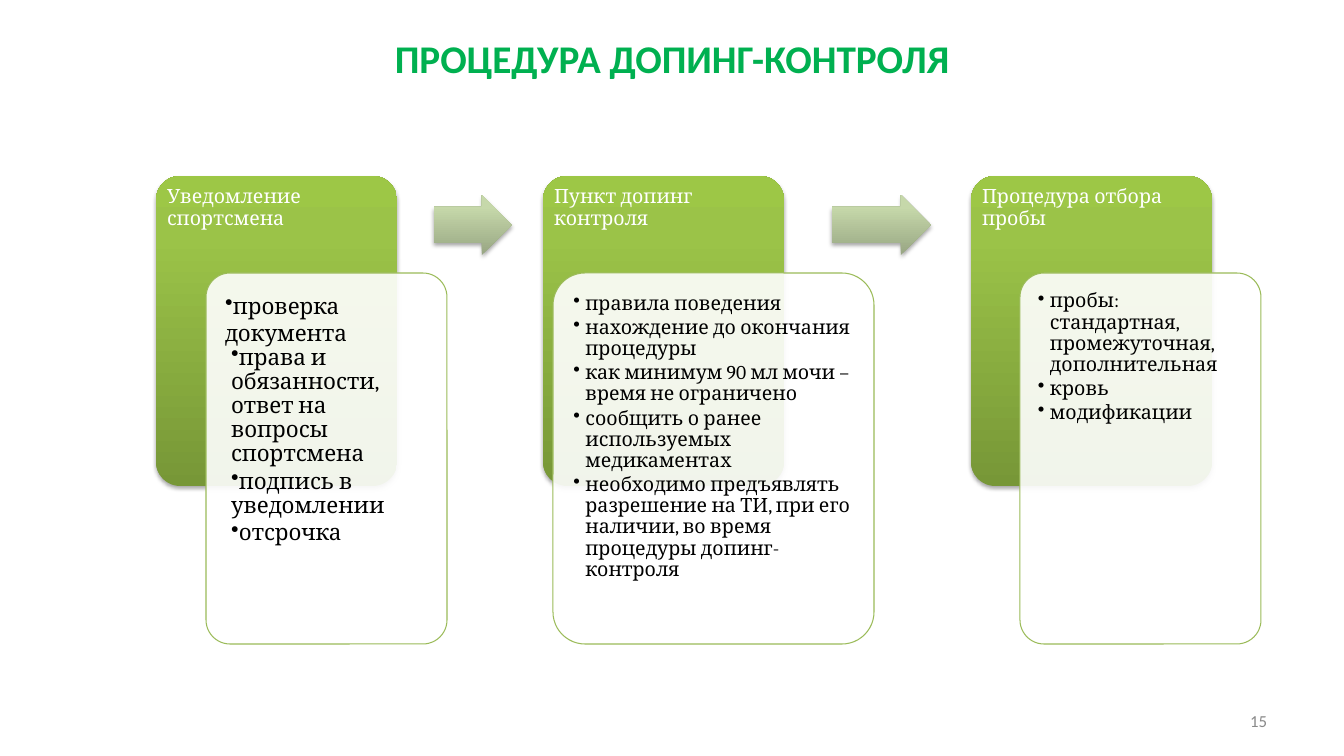
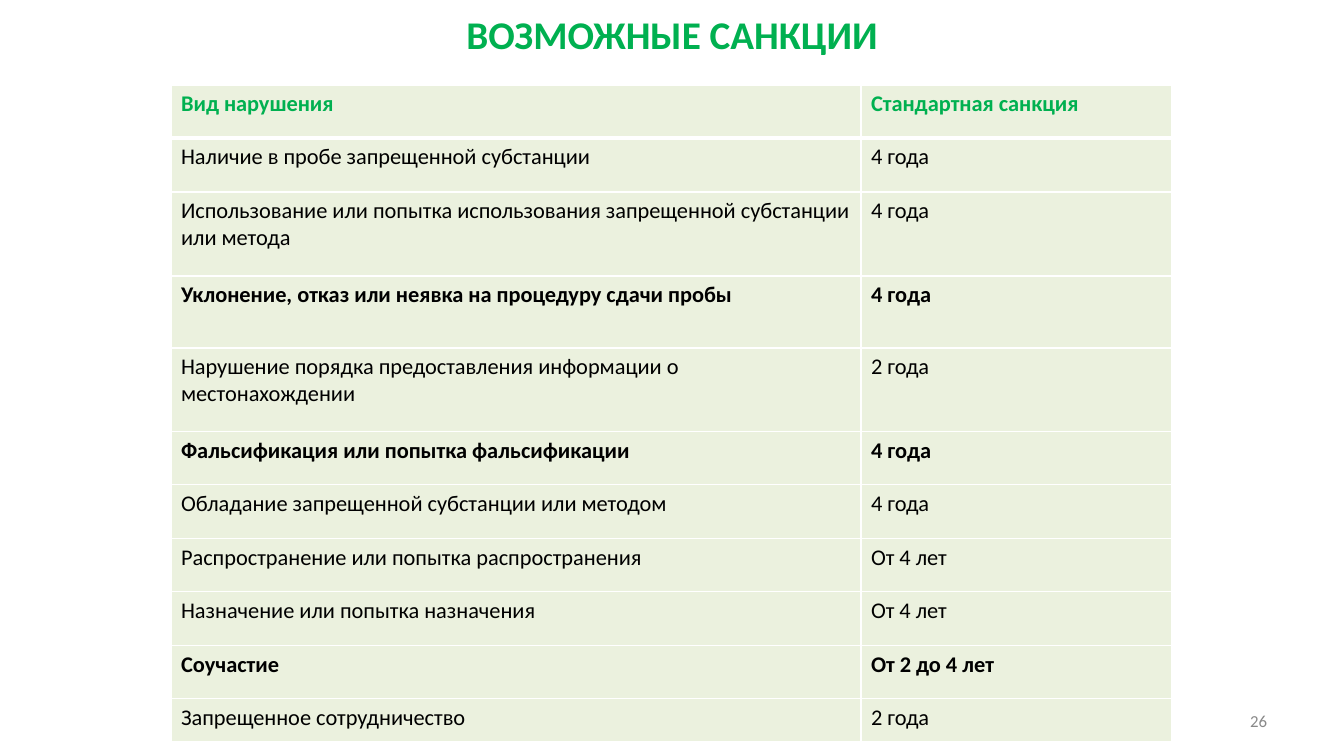
from dataclasses import dataclass

import pptx
import pptx.dml.color
import pptx.enum.shapes
import pptx.enum.text
import pptx.oxml
import pptx.oxml.ns
import pptx.util

SHAPE = pptx.enum.shapes.MSO_SHAPE
ALIGN = pptx.enum.text.PP_ALIGN
ANCHOR = pptx.enum.text.MSO_ANCHOR
EMU_PER_PX = 914400 / 100.8


@dataclass(frozen=True)
class Theme:
    heading_font: str = "Calibri"
    body_font: str = "Cambria"
    title: str = "00B050"
    text: str = "000000"
    white: str = "FFFFFF"
    muted: str = "898989"
    outline: str = "9BBB59"
    cell: str = "EBF1DE"
    card_gradient: tuple = ("779737", "9BC348", "9DC746")
    arrow_gradient: tuple = ("98A683", "C6D8AA", "C7DAAA")
    title_size: int = 28
    large_size: int = 16
    body_size: int = 14
    number_size: int = 12


THEME = Theme()

# Each step: card left, panel left, panel width, type size, text inset, items
STEPS = [
    ("Уведомление спортсмена", 156, 206, 241, THEME.large_size, 12, [
        "проверка документа",
        "права и обязанности, ответ на вопросы спортсмена",
        "подпись в уведомлении",
        "отсрочка"]),
    ("Пункт допинг контроля", 543, 553, 321, THEME.body_size, 11, [
        "правила поведения",
        "нахождение до окончания процедуры",
        "как минимум 90 мл мочи – время не ограничено",
        "сообщить о ранее используемых медикаментах",
        "необходимо предъявлять разрешение на ТИ, при его наличии, "
        "во время процедуры допинг-контроля"]),
    ("Процедура отбора пробы", 971, 1020, 241, THEME.body_size, 11, [
        "пробы: стандартная, промежуточная, дополнительная",
        "кровь",
        "модификации"]),
]
ARROWS = [(434, 195, 78, 60), (832, 195, 99, 60)]

# Each row: height, violation, sanction, bold
SANCTIONS = [
    (53, "Вид нарушения", "Стандартная санкция", True),
    (54, "Наличие в пробе запрещенной субстанции", "4 года", False),
    (84, "Использование или попытка использования запрещенной субстанции "
         "или метода", "4 года", False),
    (72, "Уклонение, отказ или неявка на процедуру сдачи пробы", "4 года", True),
    (84, "Нарушение порядка предоставления информации о местонахождении",
     "2 года", False),
    (53, "Фальсификация или попытка фальсификации", "4 года", True),
    (54, "Обладание запрещенной субстанции или методом", "4 года", False),
    (53, "Распространение или попытка распространения", "От 4 лет", False),
    (54, "Назначение или попытка назначения", "От 4 лет", False),
    (53, "Соучастие", "От 2 до 4 лет", True),
    (43, "Запрещенное сотрудничество", "2 года", False),
]


def px(length):
    return pptx.util.Emu(round(length * EMU_PER_PX))


def place(box):
    return [px(length) for length in box]


def rgb(value):
    return pptx.dml.color.RGBColor.from_string(value)


def drawing_xml(tag, attributes="", inner=""):
    namespace = pptx.oxml.ns.nsdecls("a")
    return pptx.oxml.parse_xml(
        f"<a:{tag} {namespace} {attributes}>{inner}</a:{tag}>")


# Text
def add_span(para, text, font, size, color, bold=False):
    span = para.add_run()
    span.text = text
    span.font.name = font
    span.font.size = pptx.util.Pt(size)
    span.font.bold = bold
    span.font.color.rgb = rgb(color)


def set_frame(frame, anchor, inset=None):
    frame.word_wrap = True
    frame.vertical_anchor = anchor
    if inset is not None:
        frame.margin_left = frame.margin_right = px(inset)
        frame.margin_top = frame.margin_bottom = px(inset)


def add_label(page, box, text, size, color, align, anchor, bold=False):
    frame = page.shapes.add_textbox(*place(box)).text_frame
    set_frame(frame, anchor)
    para = frame.paragraphs[0]
    para.alignment = align
    add_span(para, text, THEME.heading_font, size, color, bold)


def add_bullet(para, margin, indent):
    properties = para._p.get_or_add_pPr()
    properties.set("marL", str(px(margin)))
    properties.set("indent", str(px(indent)))
    properties.append(drawing_xml("buChar", 'char="•"'))


# Slide frame
def add_page(deck, title, title_box, title_anchor, number):
    page = deck.slides.add_slide(deck.slide_layouts[6])
    add_label(page, title_box, title, THEME.title_size, THEME.title,
              ALIGN.CENTER, title_anchor, bold=True)
    add_label(page, (964, 701, 313, 40), number, THEME.number_size,
              THEME.muted, ALIGN.RIGHT, ANCHOR.MIDDLE)
    return page


# Process parts
def add_plain_shape(page, kind, box, adjustments):
    shape = page.shapes.add_shape(kind, *place(box))
    shape.shadow.inherit = False
    shape.line.fill.background()
    for index, value in enumerate(adjustments):
        shape.adjustments[index] = value
    return shape


def add_raised_shape(page, kind, box, adjustments, gradient):
    shape = add_plain_shape(page, kind, box, adjustments)
    shape.fill.background()
    properties = shape._element.spPr
    stops = "".join(
        f'<a:gs pos="{position}"><a:srgbClr val="{color}"/></a:gs>'
        for position, color in zip((0, 80000, 100000), gradient))
    properties.replace(
        properties.find(pptx.oxml.ns.qn("a:noFill")),
        drawing_xml("gradFill", 'rotWithShape="1"',
                    f'<a:gsLst>{stops}</a:gsLst><a:lin ang="16200000" scaled="0"/>'))
    properties.find(pptx.oxml.ns.qn("a:effectLst")).append(drawing_xml(
        "outerShdw", 'blurRad="40000" dist="23000" dir="5400000" rotWithShape="0"',
        '<a:srgbClr val="000000"><a:alpha val="35000"/></a:srgbClr>'))
    return shape


def add_card(page, box, heading):
    card = add_raised_shape(page, SHAPE.ROUNDED_RECTANGLE, box, [0.1],
                            THEME.card_gradient)
    set_frame(card.text_frame, ANCHOR.TOP, 4)
    para = card.text_frame.paragraphs[0]
    para.alignment = ALIGN.LEFT
    para.line_spacing = 0.9
    add_span(para, heading, THEME.body_font, THEME.body_size, THEME.white)


def add_panel(page, box, items, size, inset):
    panel = add_plain_shape(page, SHAPE.ROUNDED_RECTANGLE, box, [0.1])
    panel.fill.solid()
    panel.fill.fore_color.rgb = rgb(THEME.white)
    color = panel._element.spPr.find(pptx.oxml.ns.qn("a:solidFill"))[0]
    color.append(drawing_xml("alpha", 'val="90000"'))
    panel.line.color.rgb = rgb(THEME.outline)
    panel.line.width = pptx.util.Pt(0.75)

    frame = panel.text_frame
    set_frame(frame, ANCHOR.TOP, inset)
    large = size == THEME.large_size
    for index, item in enumerate(items):
        para = frame.add_paragraph() if index else frame.paragraphs[0]
        para.alignment = ALIGN.LEFT
        opening = large and index == 0
        if large:
            add_bullet(para, 0 if opening else 6, 0)
        else:
            add_bullet(para, 12, -12)
        if not opening:
            para.line_spacing = 0.9
            para.space_after = pptx.util.Pt(round(size * 0.15, 1))
        add_span(para, item, THEME.body_font, size, THEME.text)


def add_step(page, top, step):
    heading, card_left, panel_left, panel_width, size, inset, items = step
    add_card(page, (card_left, top, 241, 310), heading)
    add_panel(page, (panel_left, top + 97, panel_width, 371), items, size, inset)


def build_procedure(deck):
    page = add_page(deck, "ПРОЦЕДУРА ДОПИНГ-КОНТРОЛЯ", (168, 0, 1008, 116),
                    ANCHOR.MIDDLE, "15")
    for step in STEPS:
        add_step(page, 176, step)
    for box in ARROWS:
        add_raised_shape(page, SHAPE.RIGHT_ARROW, box, [0.6, 0.5],
                         THEME.arrow_gradient)


# Sanctions table
def style_cell(cell, row):
    widths = {"lnL": 1, "lnR": 1, "lnT": 3 if row == 1 else 1,
              "lnB": 3 if row == 0 else 1}
    properties = cell._tc.get_or_add_tcPr()
    for side, width in widths.items():
        properties.append(drawing_xml(
            side, f'w="{pptx.util.Pt(width)}"',
            f'<a:solidFill><a:srgbClr val="{THEME.white}"/></a:solidFill>'))
    cell.fill.solid()
    cell.fill.fore_color.rgb = rgb(THEME.cell)


def add_sanctions(page, left, top, widths):
    height = sum(entry[0] for entry in SANCTIONS)
    box = (left, top, sum(widths), height)
    table = page.shapes.add_table(len(SANCTIONS), len(widths), *place(box)).table
    table.horz_banding = False
    for column, width in zip(table.columns, widths):
        column.width = px(width)
    for row, (row_height, violation, sanction, bold) in enumerate(SANCTIONS):
        table.rows[row].height = px(row_height)
        for column, text in enumerate((violation, sanction)):
            cell = table.cell(row, column)
            style_cell(cell, row)
            add_span(cell.text_frame.paragraphs[0], text, THEME.heading_font,
                     THEME.large_size, THEME.text if row else THEME.title, bold)


def build_sanctions(deck):
    page = add_page(deck, "ВОЗМОЖНЫЕ САНКЦИИ", (0, 5, 1344, 57),
                    ANCHOR.TOP, "26")
    add_sanctions(page, 171, 85, (690, 311))


def main():
    deck = pptx.Presentation()
    deck.slide_width = px(1344)
    deck.slide_height = px(756)
    build_procedure(deck)
    build_sanctions(deck)
    deck.save("out.pptx")


if __name__ == "__main__":
    main()
